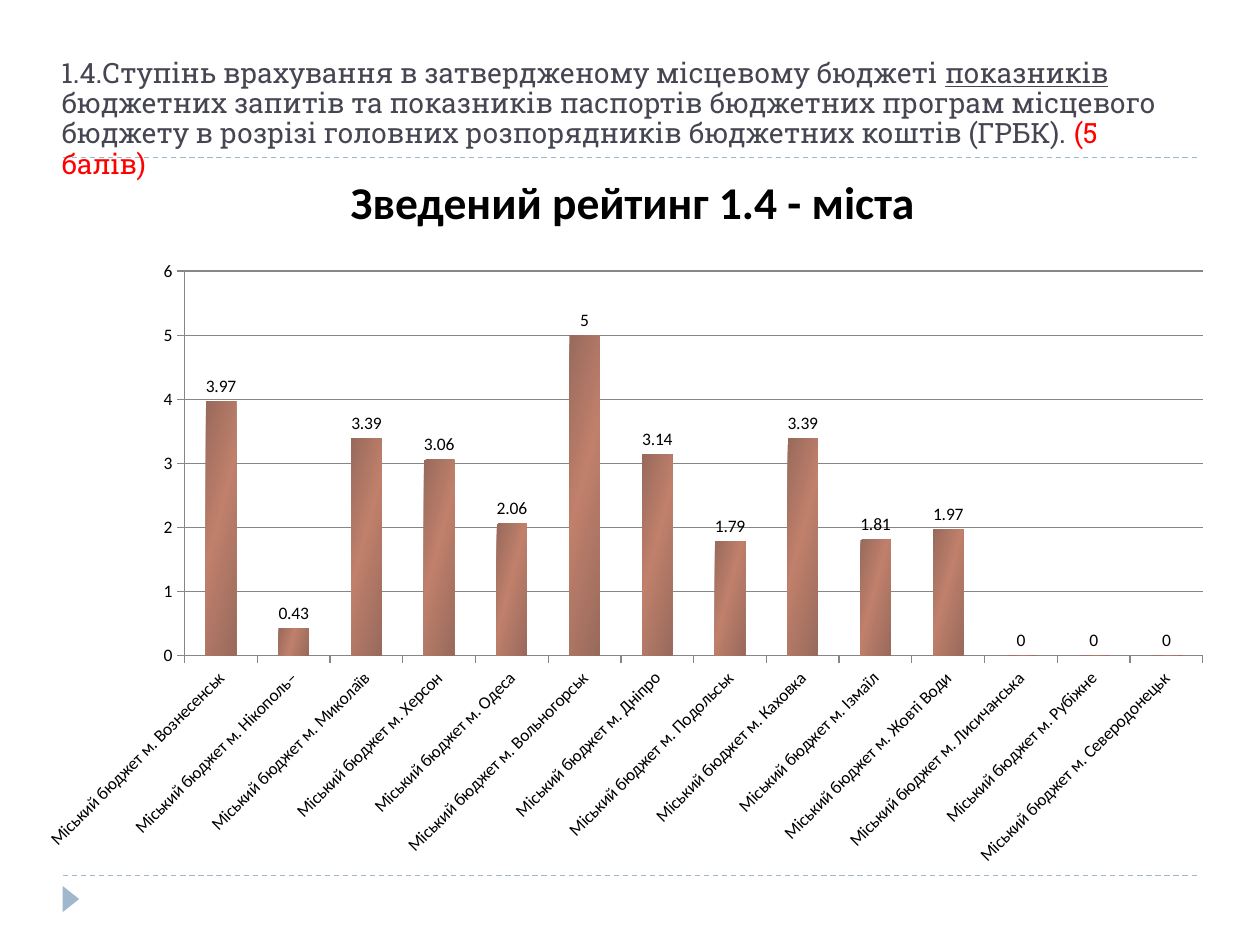
from copy import deepcopy

from lxml import etree
from pptx import Presentation
from pptx import util as u
from pptx.chart import data as cd
from pptx.dml.color import RGBColor
from pptx.enum import chart as ch, dml, shapes, text
from pptx.oxml import parse_xml
from pptx.oxml.ns import nsdecls, qn

Pt = u.Pt
BLUE = RGBColor(0x9F, 0xB8, 0xCD)
SLATE = RGBColor(0x46, 0x46, 0x53)
RED = RGBColor(0xFF, 0, 0)
BLACK = RGBColor(0, 0, 0)
GREY = RGBColor(0x86, 0x86, 0x86)
DARK = RGBColor(0x98, 0x6A, 0x5C)
CLAY = RGBColor(0xC0, 0x80, 0x6B)

CITIES = {
    "Вознесенськ": 3.97, "Нікополь–": 0.43, "Миколаїв": 3.39,
    "Херсон": 3.06, "Одеса": 2.06, "Вольногорськ": 5, "Дніпро": 3.14,
    "Подольськ": 1.79, "Каховка": 3.39, "Ізмаїл": 1.81,
    "Жовті Води": 1.97, "Лисичанська": 0, "Рубіжне": 0,
    "Северодонецьк": 0,
}
TITLE = [
    ("1.4.Ступінь врахування в затвердженому місцевому бюджеті ", SLATE, False),
    ("показників ", SLATE, True),
    ("бюджетних запитів та показників паспортів бюджетних програм "
     "місцевого бюджету в розрізі головних розпорядників бюджетних "
     "коштів (ГРБК). ", SLATE, False),
    ("(5 балів)", RED, False),
]


def style(obj, **vals):
    for key, val in vals.items():
        setattr(obj, key, val)


def words(slide, box, runs, font, para, anchor):
    frame = slide.shapes.add_textbox(*map(Pt, box)).text_frame
    style(frame, word_wrap=True, vertical_anchor=anchor)
    par = frame.paragraphs[0]
    style(par, **para)
    for words_, color, under in runs:
        run = par.add_run()
        run.text = words_
        style(run.font, underline=under, **font)
        run.font.color.rgb = color


def rule(slide, left, top, width):
    line = slide.shapes.add_connector(
        shapes.MSO_CONNECTOR.STRAIGHT, *map(Pt, (left, top, left + width, top)))
    style(line.line, width=Pt(0.75), dash_style=dml.MSO_LINE.DASH)
    line.line.color.rgb = BLUE
    etree.SubElement(line._element.spPr, qn("a:effectLst"))


def marker(slide, box):
    mark = slide.shapes.add_shape(
        shapes.MSO_SHAPE.ISOSCELES_TRIANGLE, *map(Pt, box))
    mark.rotation = 90
    mark.shadow.inherit = False
    mark.fill.solid()
    mark.fill.fore_color.rgb = BLUE
    mark.line.fill.background()


def shade(bars):
    fill = bars.format.fill
    fill.gradient()
    fill.gradient_angle = 345
    stops = bars._element.xpath(".//a:gsLst")[0]
    stops.append(deepcopy(stops[0]))
    for stop, color, place in zip(
            fill.gradient_stops, (DARK, CLAY, DARK), (0, 0.45, 1)):
        stop.color.rgb = color
        stop.position = place


def place(chart, frame):
    plot = chart._chartSpace.chart.plotArea
    for old in plot.findall(qn("c:layout")):
        plot.remove(old)
    parts = "".join(f'<c:{k} val="{v}"/>' for k, v in frame.items())
    plot.insert(0, parse_xml(
        f'<c:layout {nsdecls("c")}><c:manualLayout>'
        '<c:layoutTarget val="inner"/><c:xMode val="edge"/>'
        f'<c:yMode val="edge"/>{parts}</c:manualLayout></c:layout>'))


def graph(slide, box):
    data = cd.CategoryChartData()
    data.categories = [f"Міський бюджет м. {city}" for city in CITIES]
    data.add_series("Series 1", CITIES.values())
    chart = slide.shapes.add_chart(
        ch.XL_CHART_TYPE.COLUMN_CLUSTERED, *map(Pt, box), data).chart
    style(chart, has_title=False, has_legend=False)
    style(chart.font, size=Pt(10), name="Calibri")
    chart.font.color.rgb = BLACK
    plot = chart.plots[0]
    style(plot, gap_width=140, vary_by_categories=False, has_data_labels=True)
    style(plot.data_labels, show_value=True,
          position=ch.XL_LABEL_POSITION.OUTSIDE_END)
    shade(plot.series[0])
    cat, val = chart.category_axis, chart.value_axis
    for axis in (cat, val):
        axis.major_tick_mark = ch.XL_TICK_MARK.OUTSIDE
        axis.format.line.color.rgb = GREY
        axis.tick_labels.font.size = Pt(10)
    cat._element.find(qn("c:txPr")).find(qn("a:bodyPr")).set("rot", "-2700000")
    style(val, minimum_scale=0, maximum_scale=6, major_unit=1,
          has_major_gridlines=True)
    val.major_gridlines.format.line.color.rgb = GREY
    place(chart, {"x": 0.13, "y": 0.04, "w": 0.85, "h": 0.61})


def main():
    deck = Presentation()
    style(deck, slide_width=Pt(720), slide_height=Pt(540))
    slide = deck.slides.add_slide(deck.slide_layouts[6])
    for top in (500.4, 90):
        rule(slide, 36, top, 648)
    marker(slide, (33, 509, 15, 9.5))
    words(slide, (28, 16.5, 648, 90), TITLE,
          {"name": "Roboto Slab", "size": Pt(16)},
          {"line_spacing": 0.9}, text.MSO_ANCHOR.BOTTOM)
    words(slide, (39.6, 96, 644.4, 39),
          [("Зведений рейтинг 1.4 - міста", BLACK, False)],
          {"name": "Calibri", "size": Pt(26), "bold": True},
          {"alignment": text.PP_ALIGN.CENTER, "space_before": Pt(6)},
          text.MSO_ANCHOR.TOP)
    graph(slide, (16.5, 140.5, 684.5, 360.5))
    deck.save("out.pptx")


if __name__ == "__main__":
    main()
